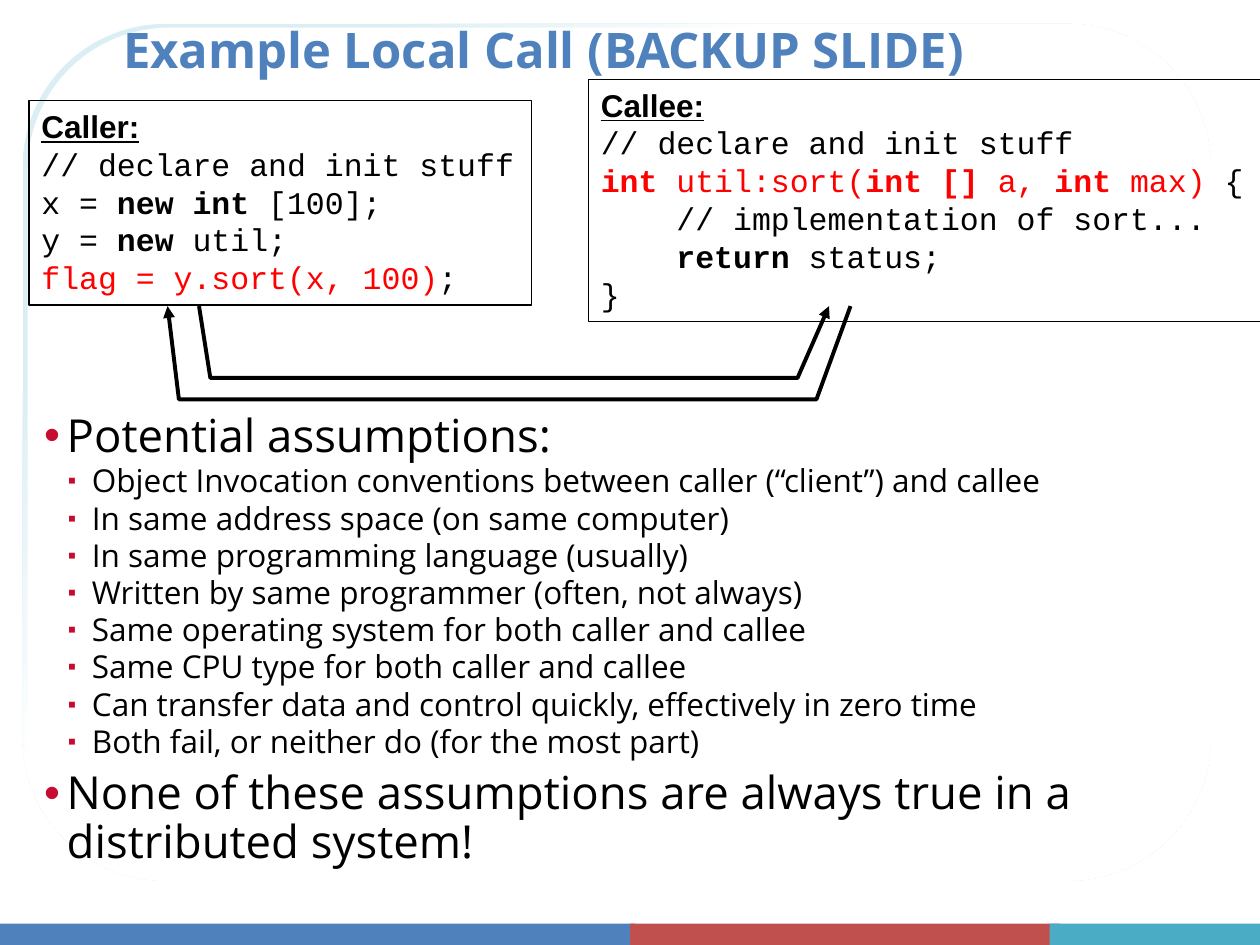
"""Build the Example Local Call slide."""
from lxml import etree
from pptx import Presentation
from pptx.dml.color import RGBColor
from pptx.enum.shapes import MSO_SHAPE
from pptx.enum.text import MSO_ANCHOR
from pptx.oxml.ns import qn
from pptx.util import Inches, Pt

RECT, ROUND = MSO_SHAPE.RECTANGLE, MSO_SHAPE.ROUNDED_RECTANGLE
BOTTOM = MSO_ANCHOR.BOTTOM
BLUE, BLACK, RED, WHITE, BULLET = "4F81BD", "000000", "FF0000", "FFFFFF", "C60C30"


def rgb(value):
    return RGBColor.from_string(value)


def add_run(p, text, size, font, color=BLACK, bold=False):
    r = p.add_run()
    r.text = text
    r.font.size, r.font.name, r.font.bold = Pt(size), font, bold
    r.font.color.rgb = rgb(color)
    return r


prs = Presentation()
prs.slide_width, prs.slide_height = Inches(10), Inches(7.5)
s = prs.slides.add_slide(prs.slide_layouts[6])

for left, width, color in [(0, 5.04, BLUE), (5, 3.41, "C0504D"), (8.33, 1.67, "4BACC6")]:
    sp = s.shapes.add_shape(RECT, Inches(left), Inches(7.33), Inches(width), Inches(0.17))
    sp.shadow.inherit = False
    sp.fill.solid()
    sp.fill.fore_color.rgb = rgb(color)
    sp.line.fill.background()

for left, top, width, height, stops in [
    (0.18, 0.19, 9.43, 6.8, [(0.17, "DBEEF4"), (0.37, WHITE)]),
    (0.22, 0.22, 9.35, 6.74, []),
]:
    sp = s.shapes.add_shape(ROUND, Inches(left), Inches(top), Inches(width), Inches(height))
    sp.shadow.inherit = False
    sp.line.fill.background()
    if stops:
        sp.fill.gradient()
        sp.fill.gradient_angle = 315
        for stop, (position, color) in zip(sp.fill.gradient_stops, stops):
            stop.position = position
            stop.color.rgb = rgb(color)
    else:
        sp.fill.solid()
        sp.fill.fore_color.rgb = rgb(WHITE)

title = s.shapes.add_textbox(Inches(0.88), Inches(0.15), Inches(8.5), Inches(0.53))
tf = title.text_frame
tf.word_wrap = True
tf.vertical_anchor = BOTTOM
p = tf.paragraphs[0]
p.line_spacing = 0.9
add_run(p, "Example Local Call (BACKUP SLIDE)", 28, "Open Sans", BLUE, True)

items = [
    (0, "Potential assumptions:"),
    (1, "Object Invocation conventions between caller (“client”) and callee"),
    (1, "In same address space (on same computer)"),
    (1, "In same programming language (usually)"),
    (1, "Written by same programmer (often, not always)"),
    (1, "Same operating system for both caller and callee"),
    (1, "Same CPU type for both caller and callee"),
    (1, "Can transfer data and control quickly, effectively in zero time"),
    (1, "Both fail, or neither do (for the most part)"),
    (0, "None of these assumptions are always true in a distributed system!"),
]
levels = [(26, 0.28, -0.18, 6, "•", 100), (18, 0.48, -0.19, 1.8, "▪", 75)]
body = s.shapes.add_textbox(Inches(0.25), Inches(3.24), Inches(9.5), Inches(4.08))
tf = body.text_frame
tf.word_wrap = True
tf.margin_left, tf.margin_top = 0, Inches(0.04)
for i, (level, text) in enumerate(items):
    size, margin, indent, before, char, percent = levels[level]
    p = tf.add_paragraph() if i else tf.paragraphs[0]
    p.level = level
    p.line_spacing = 0.9
    p.space_before = Pt(before if i else 0)
    pPr = p._p.get_or_add_pPr()
    pPr.set("marL", str(Inches(margin)))
    pPr.set("indent", str(Inches(indent)))
    color = etree.SubElement(pPr, qn("a:buClr"))
    etree.SubElement(color, qn("a:srgbClr"), val=BULLET)
    etree.SubElement(pPr, qn("a:buSzPct"), val=str(percent * 1000))
    etree.SubElement(pPr, qn("a:buFont"), typeface="Arial")
    etree.SubElement(pPr, qn("a:buChar"), char=char)
    add_run(p, text, size, "Open Sans")

caller = [
    (0, [("// declare and init stuff", BLACK, False)]),
    (0, [("x = ", BLACK, False), ("new int ", BLACK, True), ("[100];", BLACK, False)]),
    (0, [("y = ", BLACK, False), ("new ", BLACK, True), ("util;", BLACK, False)]),
    (0, [("flag = y.sort(x, 100)", RED, False), (";", BLACK, False)]),
]
callee = [
    (0, [("// declare and init stuff", BLACK, False)]),
    (0, [("int ", RED, True), ("util:sort(", RED, False), ("int []", RED, True),
         (" a, ", RED, False), ("int", RED, True), (" max) ", RED, False),
         ("{", BLACK, False)]),
    (0.6, [("// implementation of sort...", BLACK, False)]),
    (0.6, [("return", BLACK, True), (" status;", BLACK, False)]),
    (0, [("}", BLACK, False)]),
]
for left, top, width, height, heading, code in [
    (0.23, 0.8, 3.99, 1.62, "Caller:", caller),
    (4.67, 0.63, 5.42, 1.92, "Callee:", callee),
]:
    sp = s.shapes.add_textbox(Inches(left), Inches(top), Inches(width), Inches(height))
    sp.line.color.rgb = rgb(BLACK)
    sp.line.width = Pt(0.75)
    tf = sp.text_frame
    tf.word_wrap = True
    r = add_run(tf.paragraphs[0], heading, 18, "Arial", BLACK, True)
    r.font.underline = True
    for indent, runs in code:
        p = tf.add_paragraph()
        p._p.get_or_add_pPr().set("marL", str(Inches(indent)))
        for text, color, bold in runs:
            add_run(p, text, 18, "Courier New", color, bold)

for points, end in [
    ([(1.58, 2.43), (1.67, 3), (6.33, 3), (6.58, 2.43)], "a:tailEnd"),
    ([(1.33, 2.43), (1.42, 3.17), (6.48, 3.17), (6.75, 2.43)], "a:headEnd"),
]:
    points = [(Inches(x), Inches(y)) for x, y in points]
    builder = s.shapes.build_freeform(*points[0])
    builder.add_line_segments(points[1:], close=False)
    sp = builder.convert_to_shape()
    sp.shadow.inherit = False
    sp.fill.background()
    sp.line.color.rgb = rgb(BLACK)
    sp.line.width = Pt(2.25)
    etree.SubElement(sp.line._get_or_add_ln(), qn(end), type="triangle")

prs.save("out.pptx")
